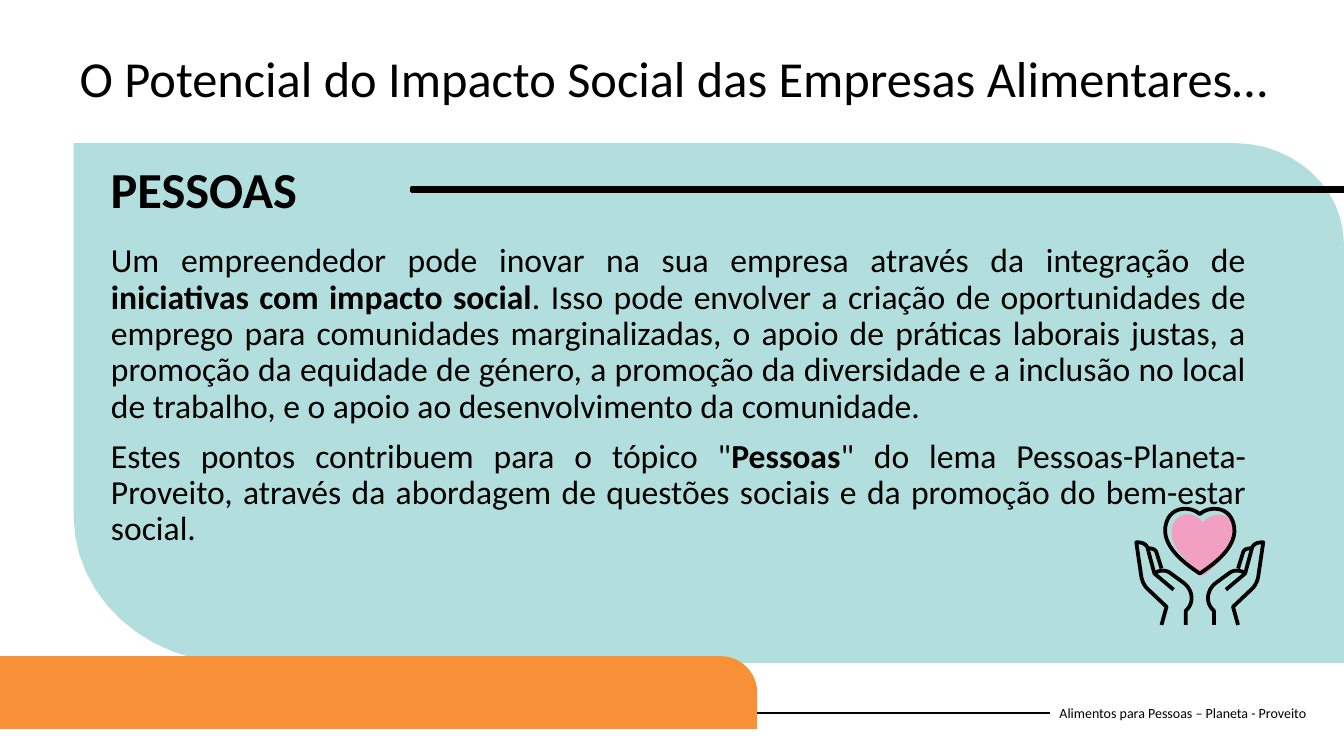
from dataclasses import dataclass

from lxml.etree import SubElement
from pptx import Presentation
from pptx.dml.color import RGBColor
from pptx.enum.shapes import MSO_CONNECTOR, MSO_SHAPE
from pptx.enum.text import MSO_ANCHOR, MSO_AUTO_SIZE, PP_ALIGN
from pptx.oxml.ns import qn
from pptx.util import Inches, Pt


@dataclass(frozen=True)
class Theme:
    font: str = "Calibri"
    ink: RGBColor = RGBColor(0, 0, 0)
    mint: RGBColor = RGBColor(0xB2, 0xDE, 0xDD)
    orange: RGBColor = RGBColor(0xF7, 0x90, 0x37)
    pink: RGBColor = RGBColor(0xF1, 0xA0, 0xC2)
    head: Pt = Pt(36)
    body: Pt = Pt(24)
    foot: Pt = Pt(10)


THEME = Theme()
STEPS = 12
MIDDLE = 11.9

PANEL = [(0.73, 1.42), (12.24, 1.42), (12.84, 1.42, 13.33, 1.87, 13.33, 2.42),
         (13.33, 6.58), (2.34, 6.58), (1.45, 6.58, 0.73, 5.92, 0.73, 5.11)]
BLUSH = [(11.93, 5.18), (12.03, 5.07, 12.21, 5.08, 12.25, 5.23),
         (12.29, 5.4, 12.1, 5.58, 11.94, 5.71),
         (11.77, 5.58, 11.62, 5.44, 11.62, 5.28),
         (11.62, 5.1, 11.82, 5.04, 11.93, 5.18)]
HEART = [(11.9, 5.1), (11.99, 5.02, 12.18, 5.02, 12.23, 5.18),
         (12.3, 5.38, 12.1, 5.56, 11.9, 5.69),
         (11.7, 5.56, 11.5, 5.38, 11.57, 5.18),
         (11.62, 5.02, 11.81, 5.02, 11.9, 5.1)]
HAND = [
    [(12.04, 6.2), (12.04, 6.06), (11.95, 5.98, 11.97, 5.86, 12.05, 5.79),
     (12.2, 5.68), (12.25, 5.65, 12.3, 5.66, 12.34, 5.68)],
    [(12.16, 5.85), (12.35, 5.69), (12.42, 5.43),
     (12.44, 5.39, 12.48, 5.38, 12.53, 5.38), (12.48, 5.72),
     (12.47, 5.77, 12.45, 5.81, 12.42, 5.84), (12.23, 6.02), (12.28, 6.2)],
    [(12.28, 5.64), (12.33, 5.48), (12.34, 5.45, 12.37, 5.44, 12.41, 5.44)],
]

TITLE = "O Potencial do Impacto Social das Empresas Alimentares…"
BODY = [
    [("Um empreendedor pode inovar na sua empresa através da integração de ", False),
     ("iniciativas com impacto social", True),
     (". Isso pode envolver a criação de oportunidades de emprego para comunidades "
      "marginalizadas, o apoio de práticas laborais justas, a promoção da equidade de "
      "género, a promoção da diversidade e a inclusão no local de trabalho, e o apoio ao "
      "desenvolvimento da comunidade.", False)],
    [('Estes pontos contribuem para o tópico "', False), ("Pessoas", True),
     ('" do lema Pessoas-Planeta-Proveito, através da abordagem de questões sociais e da '
      "promoção do bem-estar social.", False)],
]
FOOTER = "Alimentos para Pessoas – Planeta - Proveito"


def style(item, values):
    for name, value in values.items():
        setattr(item, name, value)


def place(shape, box):
    names = ("left", "top", "width", "height")
    style(shape, dict(zip(names, map(Inches, box))))


def paint(shape, fill=None, line=None, width=0):
    shape.shadow.inherit = False
    if fill is None:
        shape.fill.background()
    else:
        shape.fill.solid()
        shape.fill.fore_color.rgb = fill
    if line is None:
        shape.line.fill.background()
    else:
        shape.line.color.rgb = line
        shape.line.width = Pt(width)


def trace(path):
    dots = [path[0]]
    for part in path[1:]:
        if len(part) == 2:
            dots.append(part)
            continue
        knots = [dots[-1], part[:2], part[2:4], part[4:]]
        for step in range(1, STEPS + 1):
            t = step / STEPS
            pull = ((1 - t) ** 3, 3 * t * (1 - t) ** 2, 3 * t * t * (1 - t), t ** 3)
            dots.append(tuple(sum(p * k[axis] for p, k in zip(pull, knots))
                              for axis in (0, 1)))
    return dots


def draw(slide, dots, close=True, **look):
    first, *rest = [(Inches(x), Inches(y)) for x, y in dots]
    pen = slide.shapes.build_freeform(*first)
    pen.add_line_segments(rest, close=close)
    paint(pen.convert_to_shape(), **look)


def block(slide, kind, box, **look):
    shape = slide.shapes.add_shape(kind, *map(Inches, box))
    paint(shape, **look)
    return shape


def rule(slide, start, end, width):
    line = slide.shapes.add_connector(MSO_CONNECTOR.STRAIGHT, *map(Inches, start + end))
    line.line.color.rgb = THEME.ink
    line.line.width = Pt(width)
    SubElement(line.element.spPr, qn("a:effectLst"))


def write(shape, paras, size, anchor=MSO_ANCHOR.TOP, gap=0, **form):
    frame = shape.text_frame
    style(frame, {"word_wrap": True, "auto_size": MSO_AUTO_SIZE.NONE,
                  "vertical_anchor": anchor})
    for i, runs in enumerate(paras):
        para = frame.add_paragraph() if i else frame.paragraphs[0]
        style(para, {"space_before": Pt(gap if i else 0), **form})
        for text, bold in runs:
            run = para.add_run()
            run.text = text
            style(run.font, {"name": THEME.font, "size": size, "bold": bold})
            run.font.color.rgb = THEME.ink


def label(slide, box, text, size, bold=False, **form):
    shape = slide.shapes.add_textbox(*map(Inches, box))
    write(shape, [[(text, bold)]], size, **form)


def fill(shape, box, paras, size, **form):
    place(shape, box)
    write(shape, paras, size, line_spacing=0.9, **form)
    for para in shape.text_frame.paragraphs:
        props = para._p.get_or_add_pPr()
        style_off = {"marL": "0", "indent": "0"}
        for name, value in style_off.items():
            props.set(name, value)
        SubElement(props, qn("a:buNone"))
    shape.element.getparent().append(shape.element)


def icon(slide):
    draw(slide, trace(BLUSH), fill=THEME.pink)
    draw(slide, trace(HEART), line=THEME.ink, width=2.7)
    for path in HAND:
        dots = trace(path)
        twin = [(2 * MIDDLE - x, y) for x, y in dots]
        for side in (dots, twin):
            draw(slide, side, close=False, line=THEME.ink, width=2.7)


def main():
    deck = Presentation()
    style(deck, {"slide_width": Inches(13.33), "slide_height": Inches(7.5)})
    slide = deck.slides.add_slide(deck.slide_layouts[1])
    label(slide, (10.41, 6.87, 2.73, 0.4), FOOTER, THEME.foot, anchor=MSO_ANCHOR.MIDDLE)
    rule(slide, (0, 7.07), (10.41, 7.07), 1.5)
    draw(slide, trace(PANEL), fill=THEME.mint)
    band = block(slide, MSO_SHAPE.ROUND_1_RECTANGLE, (0, 6.51, 7.51, 0.72),
                 fill=THEME.orange)
    band.adjustments[0] = 0.5
    block(slide, MSO_SHAPE.RECTANGLE, (4.08, 1.86, 9.25, 0.04),
          fill=THEME.ink, line=THEME.ink, width=1.93)
    fill(slide.placeholders[1], (1, 2.37, 11.46, 3.76), BODY, THEME.body,
         gap=10, alignment=PP_ALIGN.JUSTIFY)
    fill(slide.shapes.title, (0.69, 0.49, 12.07, 0.88), [[(TITLE, False)]],
         THEME.head, alignment=PP_ALIGN.LEFT)
    icon(slide)
    label(slide, (1, 1.52, 2.67, 0.71), "PESSOAS", THEME.head, bold=True)
    deck.save("out.pptx")


if __name__ == "__main__":
    main()
